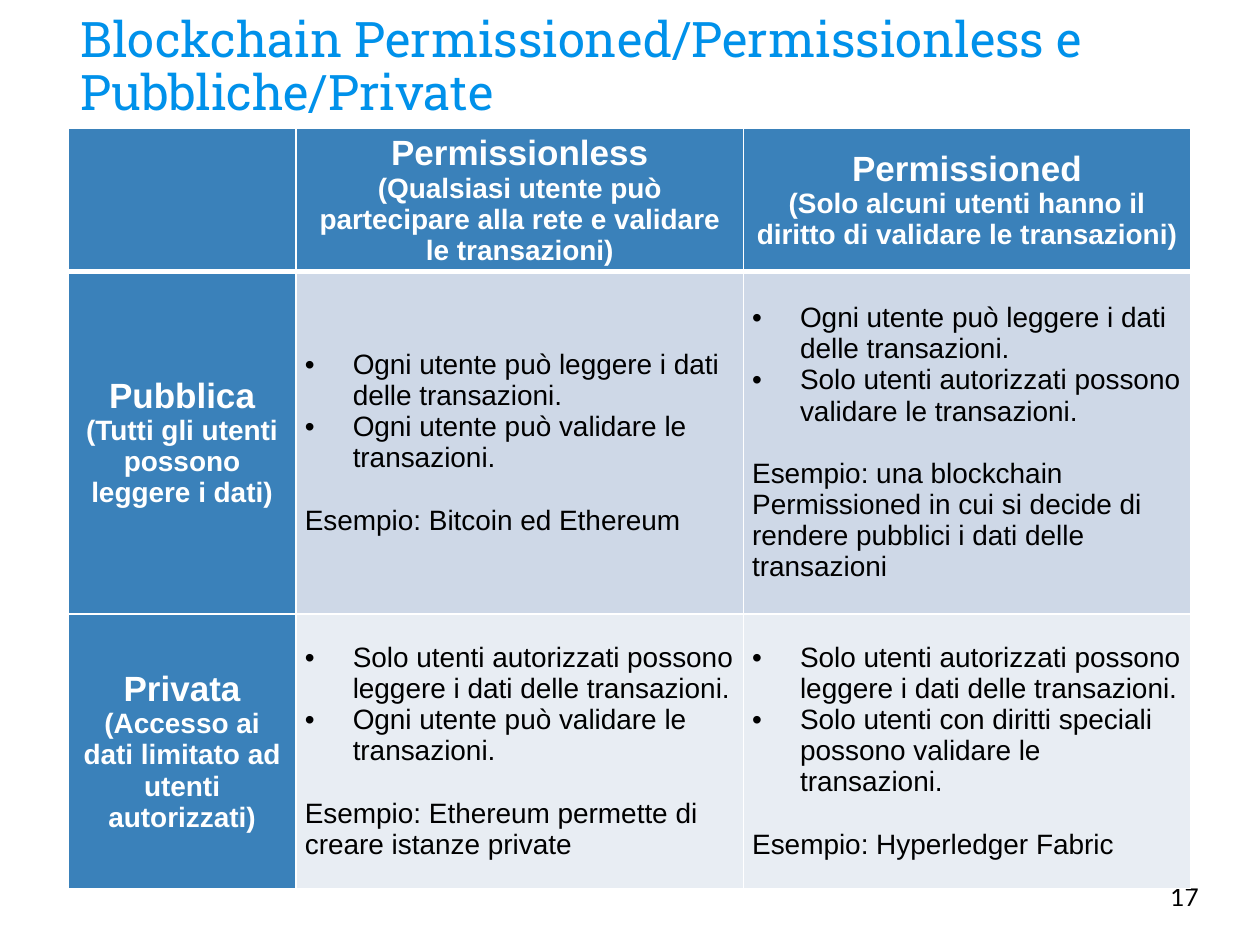
from lxml.etree import SubElement
from pptx import Presentation
from pptx.dml.color import RGBColor
from pptx.enum.text import MSO_ANCHOR, PP_ALIGN
from pptx.oxml.ns import qn
from pptx.util import Inches, Pt

WHITE = RGBColor(0xFF, 0xFF, 0xFF)
BLACK = RGBColor(0, 0, 0)
AZURE = RGBColor(0x00, 0x91, 0xEA)
BLUE = RGBColor(0x3A, 0x81, 0xBA)
BANDS = [BLUE, RGBColor(0xCE, 0xD8, 0xE7), RGBColor(0xE8, 0xED, 0xF3)]

COLS = [1.81, 3.55, 3.55]
ROWS = [1.01, 2.72, 2.18]
LEFT, TOP = 0.54, 1.02

# Headings are (name, note); bodies are (bullet, bullet, example)
GRID = [
    [(),
     ("Permissionless",
      "(Qualsiasi utente può partecipare alla rete e validare le transazioni)"),
     ("Permissioned",
      "(Solo alcuni utenti hanno il diritto di validare le transazioni)")],
    [("Pubblica", "(Tutti gli utenti possono leggere i dati)"),
     ("Ogni utente può leggere i dati delle transazioni.",
      "Ogni utente può validare le transazioni.",
      "Esempio: Bitcoin ed Ethereum"),
     ("Ogni utente può leggere i dati delle transazioni.",
      "Solo utenti autorizzati possono validare le transazioni.",
      "Esempio: una blockchain Permissioned in cui si decide di rendere "
      "pubblici i dati delle transazioni")],
    [("Privata", "(Accesso ai dati limitato ad utenti autorizzati)"),
     ("Solo utenti autorizzati possono leggere i dati delle transazioni.",
      "Ogni utente può validare le transazioni.",
      "Esempio: Ethereum permette di creare istanze private"),
     ("Solo utenti autorizzati possono leggere i dati delle transazioni.",
      "Solo utenti con diritti speciali possono validare le transazioni.",
      "Esempio: Hyperledger Fabric")],
]


def style(para, color, **form):
    for key, value in form.items():
        setattr(para.font, key, value)
    para.font.color.rgb = color


def edge(cell, side, width):
    line = SubElement(cell._tc.get_or_add_tcPr(), qn("a:" + side), w=str(Pt(width)))
    fill = SubElement(line, qn("a:solidFill"))
    SubElement(fill, qn("a:srgbClr"), val=str(WHITE))


deck = Presentation()
deck.slide_width, deck.slide_height = Inches(10), Inches(7.5)
slide = deck.slides.add_slide(deck.slide_layouts[6])

# Title and page number
LABELS = [
    ("Blockchain Permissioned/Permissionless e Pubbliche/Private",
     (LEFT, 0.04, 8.28, 1.02), MSO_ANCHOR.BOTTOM, AZURE,
     {"name": "Roboto Slab", "size": Pt(28)}),
    ("17", (9.19, 6.93, 0.6, 0.57), MSO_ANCHOR.TOP, BLACK,
     {"name": "Lato", "size": Pt(14)}),
]
for text, place, anchor, color, form in LABELS:
    frame = slide.shapes.add_textbox(*map(Inches, place)).text_frame
    inset = {"margin_" + side: Inches(0.1)
             for side in ("left", "top", "right", "bottom")}
    for key, value in {"word_wrap": True, "vertical_anchor": anchor, **inset}.items():
        setattr(frame, key, value)
    para = frame.paragraphs[0]
    para.text = text
    para.line_spacing = 0.9
    style(para, color, **form)

# Table grid
table = slide.shapes.add_table(
    len(ROWS), len(COLS), Inches(LEFT), Inches(TOP),
    Inches(sum(COLS)), Inches(sum(ROWS))).table
for col, width in zip(table.columns, COLS):
    col.width = Inches(width)
for row, height in zip(table.rows, ROWS):
    row.height = Inches(height)

# Cells
for r, line in enumerate(GRID):
    for c, texts in enumerate(line):
        cell = table.cell(r, c)
        head = r == 0 or c == 0
        box = {"vertical_anchor": MSO_ANCHOR.MIDDLE,
               "margin_left": Inches(0.07), "margin_right": Inches(0.07),
               "margin_top": 0, "margin_bottom": 0}
        for key, value in box.items():
            setattr(cell, key, value)
        edges = {"lnL": 1, "lnR": 1, "lnT": 3 if r == 1 else 1,
                 "lnB": 3 if r == 0 else 1}
        for side, width in edges.items():
            edge(cell, side, width)
        cell.fill.solid()
        cell.fill.fore_color.rgb = BLUE if head else BANDS[r]

        frame = cell.text_frame
        for i, text in enumerate(texts):
            para = frame.paragraphs[0] if i == 0 else frame.add_paragraph()
            para.text = text
            if head:
                para.alignment = PP_ALIGN.CENTER
            elif i < 2:
                props = para._p.get_or_add_pPr()
                props.set("marL", str(Inches(0.38)))
                props.set("indent", str(-Inches(0.38)))
                SubElement(props, qn("a:buFont"), typeface="Arial")
                SubElement(props, qn("a:buChar"), char="•")
            else:
                para.space_before = Pt(18)
            style(para, WHITE if head else BLACK, name="Arial", bold=head,
                  size=Pt(20 if head and i == 0 else 16))

deck.save("out.pptx")
